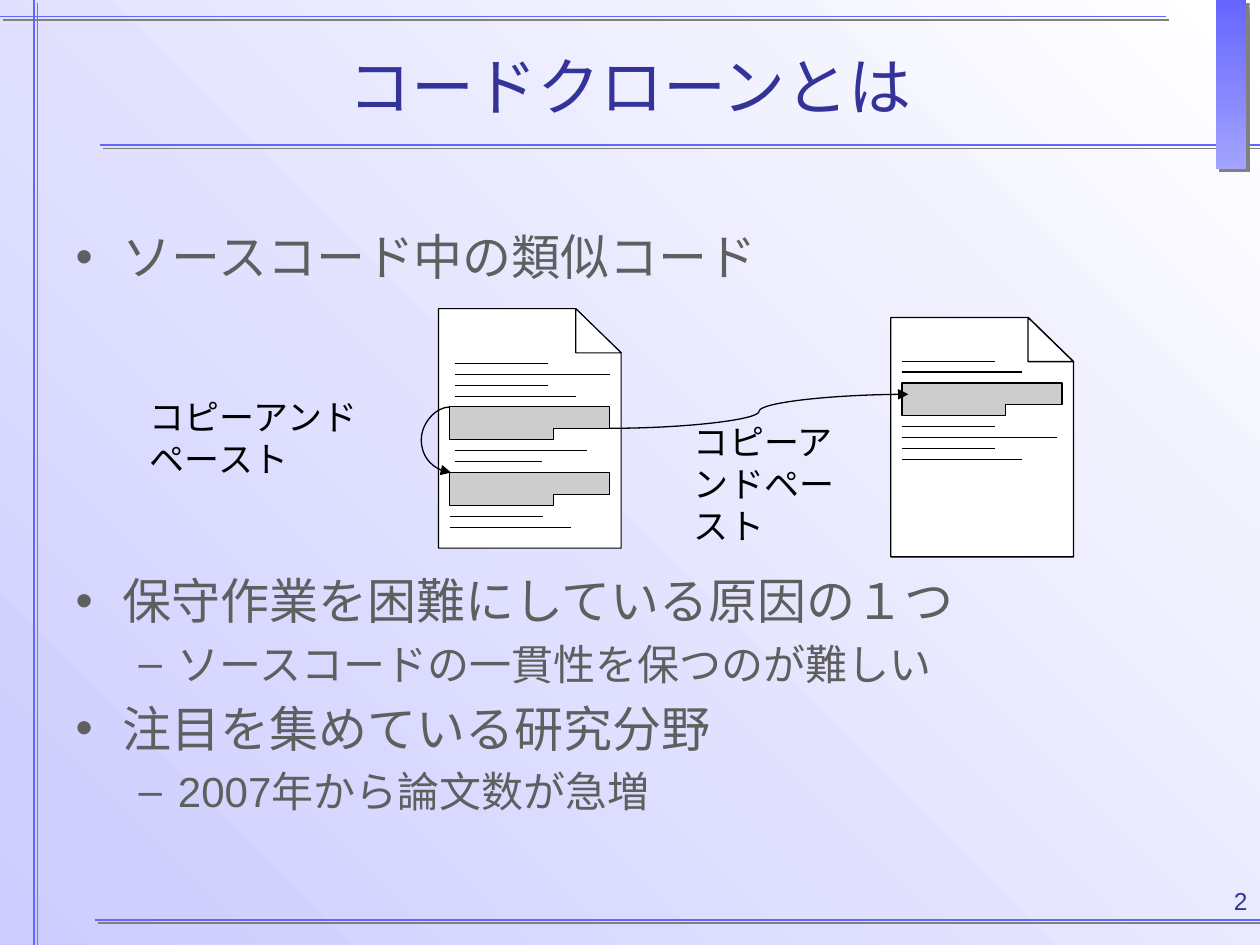
from lxml import etree
from pptx import Presentation
from pptx.dml.color import RGBColor
from pptx.enum.shapes import MSO_CONNECTOR, MSO_SHAPE
from pptx.enum.text import MSO_ANCHOR, MSO_AUTO_SIZE, PP_ALIGN
from pptx.oxml.ns import qn
from pptx.util import Inches, Pt

STRAIGHT, CURVE = MSO_CONNECTOR.STRAIGHT, MSO_CONNECTOR.CURVE
RECTANGLE = MSO_SHAPE.RECTANGLE
MIDDLE = MSO_ANCHOR.MIDDLE
NO_FIT, GROW = MSO_AUTO_SIZE.NONE, MSO_AUTO_SIZE.SHAPE_TO_FIT_TEXT
LEFT, CENTER, RIGHT = PP_ALIGN.LEFT, PP_ALIGN.CENTER, PP_ALIGN.RIGHT

BLACK = RGBColor(0x00, 0x00, 0x00)
WHITE = RGBColor(0xFF, 0xFF, 0xFF)
NAVY = RGBColor(0x33, 0x33, 0x99)
BLUE = RGBColor(0x66, 0x66, 0xFF)
LIGHT_BLUE = RGBColor(0xA2, 0xA2, 0xFF)
LAVENDER = RGBColor(0xCC, 0xCC, 0xFF)
GRAY = RGBColor(0x5F, 0x5F, 0x5F)
CLONE_GRAY = RGBColor(0xCD, 0xCD, 0xCD)
SHADOW_GRAY = RGBColor(0x80, 0x80, 0x80)

# The slide is a grid of 100 columns by 75 rows
COLS, ROWS = 100, 75
CELL = Inches(0.1)
# Page icon, in cells
PAGE_W, PAGE_H = 14.5, 19
FOLD_W, FOLD_H = 3.6, 3.5
CODE_ROW = 2.6 / 3
MARGIN = 0.9


def cells(*values):
    return [round(v * CELL) for v in values]


class SlideBuilder:
    """Holds the style and the current slide; lengths are in grid cells."""

    heading_font = "Arial"
    label_font = "Times New Roman"

    def __init__(self, prs):
        self.s = prs.slides.add_slide(prs.slide_layouts[1])
        self.shapes = self.s.shapes

    def gradient(self, fill, start, end, angle):
        fill.gradient()
        fill.gradient_angle = angle
        for stop, color in zip(fill.gradient_stops, (start, end)):
            stop.color.rgb = color

    def effects(self, sp, shadow):
        effects = etree.SubElement(sp._element.spPr, qn("a:effectLst"))
        if shadow:
            outer = etree.SubElement(effects, qn("a:outerShdw"),
                                     dist=str(Pt(2.8)), dir="2700000", algn="ctr")
            etree.SubElement(outer, qn("a:srgbClr"), val=str(SHADOW_GRAY))

    def line(self, x1, y1, x2, y2, color=BLACK, width=0.75, shadow=False, kind=STRAIGHT):
        sp = self.shapes.add_connector(kind, *cells(x1, y1, x2, y2))
        sp.line.color.rgb = color
        sp.line.width = Pt(width)
        self.effects(sp, shadow)
        return sp

    def curved_arrow(self, x1, y1, x2, y2, bend=0.5):
        sp = self.line(x1, y1, x2, y2, kind=CURVE)
        guides = sp._element.spPr.find(qn("a:prstGeom")).get_or_add_avLst()
        etree.SubElement(guides, qn("a:gd"), name="adj1", fmla=f"val {round(bend * 100000)}")
        etree.SubElement(sp.line._get_or_add_ln(), qn("a:tailEnd"), type="triangle")

    def bar(self, x, y, w, h):
        sp = self.shapes.add_shape(RECTANGLE, *cells(x, y, w, h))
        self.gradient(sp.fill, BLUE, LIGHT_BLUE, 270)
        sp.line.fill.background()
        self.effects(sp, True)

    def outline(self, points, fill, width):
        start, *rest = [cells(*point) for point in points]
        builder = self.shapes.build_freeform(*start)
        builder.add_line_segments(rest, close=True)
        sp = builder.convert_to_shape()
        sp.shadow.inherit = False
        sp.fill.solid()
        sp.fill.fore_color.rgb = fill
        sp.line.color.rgb = BLACK
        sp.line.width = Pt(width)

    def page(self, x, y, code, clones, width):
        """code: (row, indent, length) lines; clones: first rows of the blocks."""
        right, fold = x + PAGE_W, x + PAGE_W - FOLD_W
        self.outline([(x, y), (x, y + PAGE_H), (right, y + PAGE_H),
                      (right, y + FOLD_H), (fold, y)], WHITE, width)
        self.outline([(fold, y), (right, y + FOLD_H), (fold, y + FOLD_H)], WHITE, width)
        for row in clones:
            x1, x2, x3 = (x + MARGIN + dx for dx in (0, 8.2, 12.7))
            y1, y2, y3 = (y + (row + n) * CODE_ROW for n in (0, 2, 3))
            self.outline([(x1, y1), (x3, y1), (x3, y2), (x2, y2), (x2, y3), (x1, y3)],
                         CLONE_GRAY, width)
        for row, indent, length in code:
            line_y = y + row * CODE_ROW
            self.line(x + indent, line_y, x + indent + length, line_y, width=width)

    def run(self, p, text, size, font, color):
        r = p.add_run()
        r.text = text
        r.font.size, r.font.name = Pt(size), font
        r.font.color.rgb = color

    def place(self, sp, x, y, w, h):
        sp.left, sp.top, sp.width, sp.height = cells(x, y, w, h)

    def title(self, text, *box):
        sp = self.shapes.title
        self.place(sp, *box)
        tf = sp.text_frame
        tf.vertical_anchor = MIDDLE
        tf.auto_size = NO_FIT
        p = tf.paragraphs[0]
        p.alignment = CENTER
        self.run(p, text, 36, self.heading_font, NAVY)

    def bullets(self, items, *box):
        """items: (level, text, space before in points or None)."""
        sp = self.s.placeholders[1]
        self.place(sp, *box)
        tf = sp.text_frame
        tf.auto_size = NO_FIT
        for i, (level, text, gap) in enumerate(items):
            p = tf.add_paragraph() if i else tf.paragraphs[0]
            p.level = level
            if gap:
                p.space_before = Pt(gap)
            self.run(p, text, 28 - 4 * level, self.heading_font, GRAY)

    def label(self, text, x, y, w, h, size=20, font=label_font, color=BLACK, align=LEFT):
        tf = self.shapes.add_textbox(*cells(x, y, w, h)).text_frame
        tf.word_wrap = True
        tf.auto_size = GROW
        p = tf.paragraphs[0]
        p.alignment = align
        self.run(p, text, size, font, color)


def main():
    prs = Presentation()
    prs.slide_width, prs.slide_height = cells(COLS, ROWS)
    s = SlideBuilder(prs)

    # Background and frame
    s.gradient(s.s.background.fill, LAVENDER, WHITE, 45)
    for ends in [(0, 1.3, 92.5, 1.3), (7.9, 11.5, 100.4, 11.5),
                 (7.5, 73, 100, 73), (2.7, 0, 2.7, ROWS)]:
        s.line(*ends, color=BLUE, width=1, shadow=True)
    s.bar(96.5, 0, 2.4, 13.4)
    s.label("2", 76.7, 69.8, 23.3, 5.2, 14, s.heading_font, NAVY, RIGHT)

    # Title and list, with room for the diagram after the first item
    s.title("コードクローンとは", 5, 0.5, 90, 12.5)
    s.bullets([
        (0, "ソースコード中の類似コード", None),
        (0, "保守作業を困難にしている原因の１つ", 163),
        (1, "ソースコードの一貫性を保つのが難しい", None),
        (0, "注目を集めている研究分野", None),
        (1, "2007年から論文数が急増", None),
    ], 5, 17.5, 90, 55.9)

    # Source files with their cloned blocks
    s.page(34.8, 24.5, [(5, 1.3, 7.4), (6, 1.3, 12.3), (7, 1.3, 7.4), (8, 1.3, 9.6),
                        (13, 1.3, 10.5), (14, 1.3, 6.9), (19, 0.9, 7.4), (20, 0.9, 9.6)],
           clones=[9, 15], width=0.63)
    s.page(70.7, 25.2, [(4, 0.9, 7.4), (5, 0.9, 9.5), (10, 0.9, 7.4),
                        (11, 0.9, 12.3), (12, 0.9, 7.4), (13, 0.9, 9.5)],
           clones=[6], width=0.75)

    # Copy-and-paste arrows and labels
    s.curved_arrow(35.7, 32.3, 35.8, 37.5, bend=-23)
    s.curved_arrow(48.4, 34, 72.1, 31.3)
    s.label("コピーアンドペースト", 10.9, 30.9, 23.1, 4.3)
    s.label("コピーアンドペースト", 54.1, 32.9, 15.6, 7.7)

    prs.save("out.pptx")


if __name__ == "__main__":
    main()
